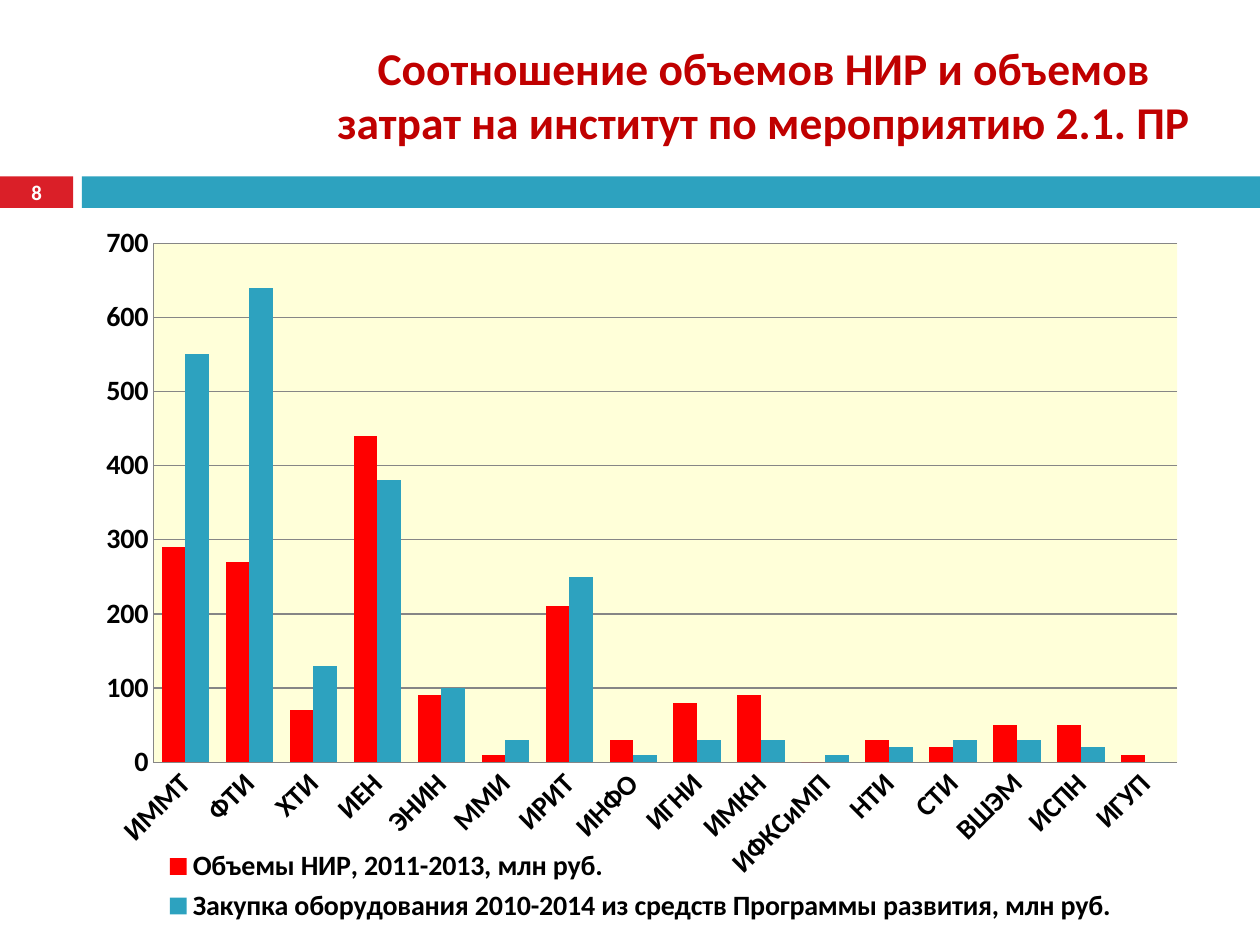
from dataclasses import dataclass
from lxml.etree import SubElement
from pptx import Presentation
from pptx.chart.data import CategoryChartData as Data
from pptx.dml.color import RGBColor
from pptx.enum.chart import XL_CHART_TYPE as Kind, XL_LEGEND_POSITION as Place, XL_TICK_MARK as Tick
from pptx.enum.shapes import MSO_SHAPE as Form
from pptx.enum.text import MSO_ANCHOR as Anchor, PP_ALIGN as Align
from pptx.oxml import parse_xml
from pptx.oxml.ns import nsdecls, qn
from pptx.util import Inches, Pt

WIDE, HIGH = 10, 7.5
FACE = "Calibri"
RED = RGBColor(0xFF, 0x00, 0x00)
DARK = RGBColor(0xC0, 0x00, 0x00)
BADGE = RGBColor(0xDA, 0x1F, 0x28)
TEAL = RGBColor(0x2D, 0xA2, 0xBF)
GREY = RGBColor(0x86, 0x86, 0x86)
BLACK = RGBColor(0x00, 0x00, 0x00)
WHITE = RGBColor(0xFF, 0xFF, 0xFF)
YELLOW = RGBColor(0xFF, 0xFF, 0x00)


@dataclass(frozen=True)
class Box:
    """Area of the slide, in inches."""
    left: float
    top: float
    width: float
    height: float

    def emu(self) -> tuple:
        """Give the four lengths in slide units."""
        return tuple(Inches(n) for n in (self.left, self.top, self.width, self.height))


@dataclass(frozen=True)
class Series:
    """One named row of columns."""
    name: str
    color: RGBColor
    values: tuple


GAP = 0.65
BADGE_W = 0.58
BAND_Y, BAND_H = 1.4, 0.25
BANDS = (
    (Box(0, BAND_Y, BADGE_W, BAND_H), BADGE),
    (Box(GAP, BAND_Y, WIDE - GAP, BAND_H), TEAL),
)
NAMES = ("ИММТ", "ФТИ", "ХТИ", "ИЕН", "ЭНИН", "ММИ", "ИРИТ", "ИНФО",
         "ИГНИ", "ИМКН", "ИФКСиМП", "НТИ", "СТИ", "ВШЭМ", "ИСПН", "ИГУП")
ROWS = (
    Series("Объемы НИР, 2011-2013, млн руб.", RED,
           (290, 270, 70, 440, 90, 10, 210, 30, 80, 90, 0, 30, 20, 50, 50, 10)),
    Series("Закупка оборудования 2010-2014 из средств Программы развития, млн руб.", TEAL,
           (550, 640, 130, 380, 100, 30, 250, 10, 30, 30, 10, 20, 30, 30, 20, 0)),
)


def style(font, size: float, color: RGBColor, bold: bool = True) -> None:
    """Set the face, size, weight and colour of a font."""
    font.name, font.size, font.bold = FACE, Pt(size), bold
    font.color.rgb = color


def write(slide, box: Box, text: str, *, size: float, color: RGBColor, pad: float = 0) -> None:
    """Put centred bold text in a box."""
    frame = slide.shapes.add_textbox(*box.emu()).text_frame
    frame.word_wrap = True
    frame.vertical_anchor = Anchor.MIDDLE
    frame.margin_left = frame.margin_right = Inches(pad)
    frame.margin_top = frame.margin_bottom = 0
    line = frame.paragraphs[0]
    line.alignment = Align.CENTER
    run = line.add_run()
    run.text = text
    style(run.font, size, color)


def band(slide, box: Box, color: RGBColor) -> None:
    """Draw a plain filled strip."""
    shape = slide.shapes.add_shape(Form.RECTANGLE, *box.emu())
    shape.shadow.inherit = False
    shape.fill.solid()
    shape.fill.fore_color.rgb = color
    shape.line.fill.background()


def layout(box: Box, inner: bool = False):
    """Build a manual layout from shares of the chart."""
    root = parse_xml(f"<c:layout {nsdecls('c')}><c:manualLayout/></c:layout>")
    parts = [("layoutTarget", "inner")] if inner else []
    parts += [("xMode", "edge"), ("yMode", "edge"), ("x", box.left),
              ("y", box.top), ("w", box.width), ("h", box.height)]
    for tag, value in parts:
        SubElement(root[0], qn(f"c:{tag}")).set("val", str(value))
    return root


def shade(area, color: RGBColor, share: int) -> None:
    """Fill the plot area with a see-through colour."""
    fill = parse_xml(
        f"<c:spPr {nsdecls('c', 'a')}><a:solidFill><a:srgbClr val='{color}'>"
        f"<a:alpha val='{share * 1000}'/></a:srgbClr></a:solidFill></c:spPr>")
    area.append(fill)


def rule(line) -> None:
    """Draw a thin grey chart line."""
    line.color.rgb = GREY
    line.width = Pt(0.75)


def graph(slide, box: Box) -> None:
    """Add the clustered columns with their axes and legend."""
    data = Data(number_format="0")
    data.categories = NAMES
    for row in ROWS:
        data.add_series(row.name, row.values)
    chart = slide.shapes.add_chart(Kind.COLUMN_CLUSTERED, *box.emu(), data).chart
    style(chart.font, 18, BLACK, False)
    chart.has_title = False
    plot = chart.plots[0]
    plot.gap_width, plot.overlap = 70, 0
    plot.vary_by_categories = False
    for series, row in zip(plot.series, ROWS):
        series.format.fill.solid()
        series.format.fill.fore_color.rgb = row.color
        series.invert_if_negative = False
    for axis in (chart.category_axis, chart.value_axis):
        axis.major_tick_mark = axis.minor_tick_mark = Tick.NONE
        style(axis.tick_labels.font, 16, BLACK)
        rule(axis.format.line)
    turn = chart.category_axis._element.find(qn("c:txPr")).find(qn("a:bodyPr"))
    turn.set("rot", "-2700000")
    scale = chart.value_axis
    scale.minimum_scale, scale.maximum_scale, scale.major_unit = 0, 700, 100
    scale.has_major_gridlines = True
    rule(scale.major_gridlines.format.line)
    area = chart._chartSpace.chart.plotArea
    for old in area.findall(qn("c:layout")):
        area.remove(old)
    area.insert(0, layout(Box(0.078, 0.027, 0.897, 0.737), True))
    shade(area, YELLOW, 15)
    chart.has_legend = True
    key = chart.legend
    key.position, key.include_in_layout = Place.BOTTOM, False
    style(key.font, 16, BLACK)
    for old in key._element.findall(qn("c:layout")):
        key._element.remove(old)
    key._element.find(qn("c:legendPos")).addnext(layout(Box(0.07, 0.88, 0.87, 0.12)))


def main() -> None:
    """Build and save the slide."""
    deck = Presentation()
    deck.slide_width, deck.slide_height = Inches(WIDE), Inches(HIGH)
    slide = deck.slides.add_slide(deck.slide_layouts[6])
    for box, color in BANDS:
        band(slide, box, color)
    write(slide, Box(2.56, 0.21, 7.01, 1.08),
          "Соотношение объемов НИР и объемов затрат на институт по мероприятию 2.1. ПР",
          size=26, color=DARK, pad=0.1)
    write(slide, Box(0, 1.39, BADGE_W, 0.27), "8", size=11.9, color=WHITE)
    graph(slide, Box(0.51, 1.78, 9.06, 5.59))
    deck.save("out.pptx")


if __name__ == "__main__":
    main()
